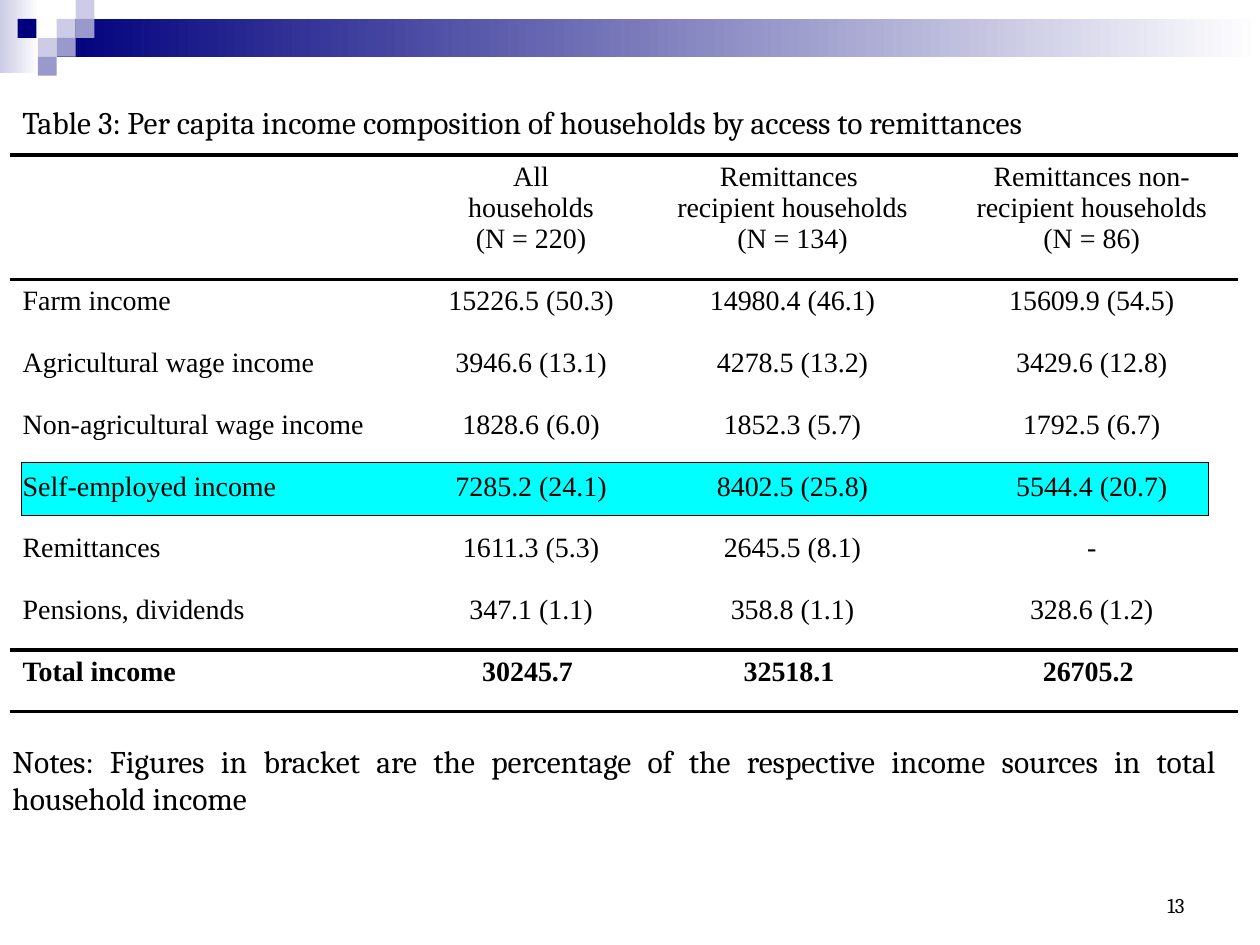
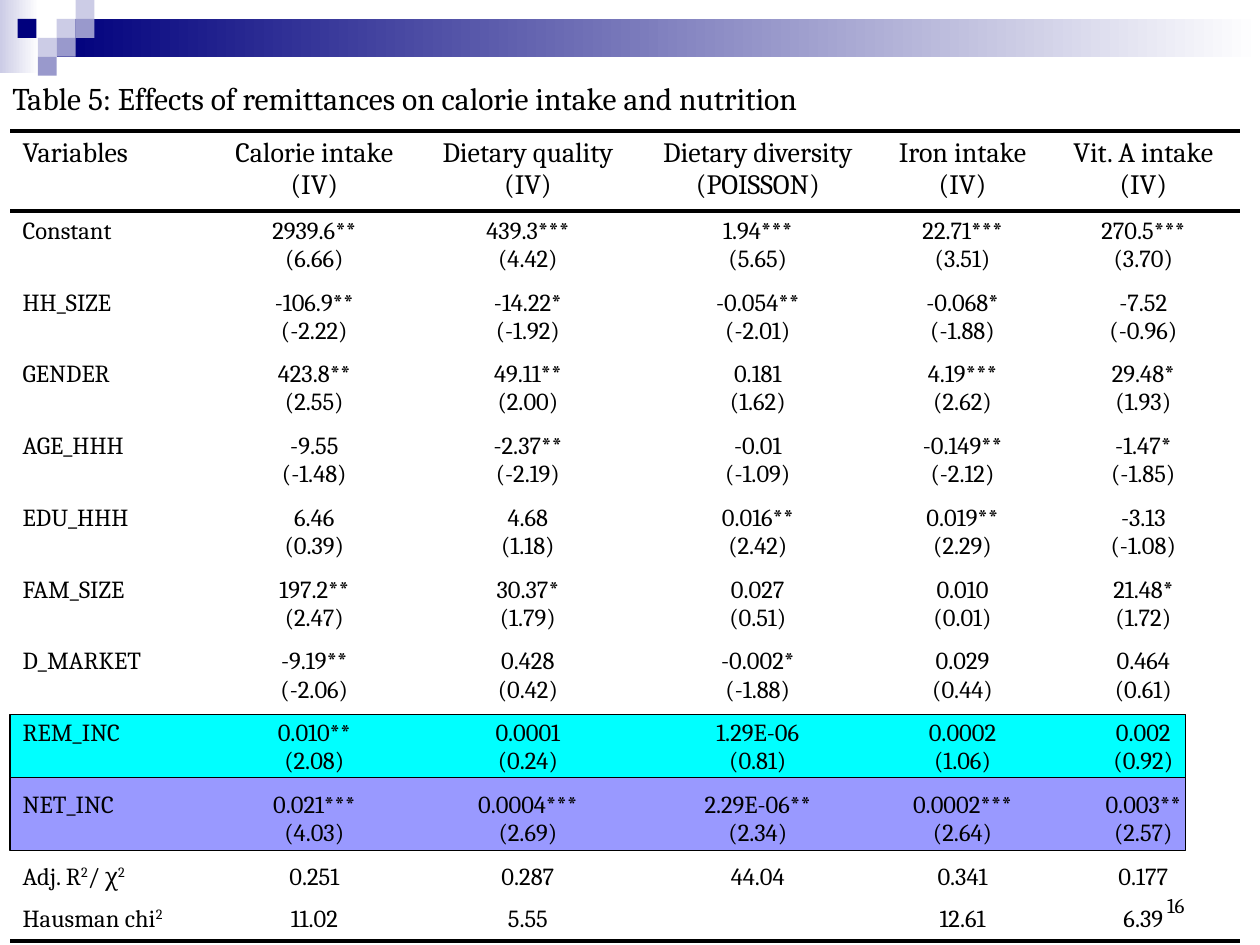
import pptx
import pptx.util
import pptx.dml.color
import pptx.enum.shapes
import pptx.enum.text
import pptx.oxml
import pptx.oxml.ns
from lxml import etree

RGB = pptx.dml.color.RGBColor
BLACK = RGB(0, 0, 0)
WHITE = RGB(255, 255, 255)
NAVY = RGB(0, 0, 0x7D)
PALE = RGB(0xCC, 0xCC, 0xE6)
MID = RGB(0x99, 0x99, 0xCC)
CYAN = RGB(0, 255, 255)
VIOLET = RGB(0x99, 0x99, 0xFF)

SERIF, TIMES = "Cambria", "Times New Roman"
NO_STYLE = "{2D5ABB26-0587-4C30-8999-92F81FD0307C}"
ALIGN = pptx.enum.text.PP_ALIGN
ANCHOR = pptx.enum.text.MSO_ANCHOR
IN, PT = pptx.util.Inches, pptx.util.Pt

# Top band: gradient bars, then squares as (column, row, colour) of a grid
UNIT = 0.15
BARS = [((0, 0, 0.31, 0.58), PALE), ((0.45, 0.15, 9.55, 0.3), NAVY)]
TILES = [(3, 1, PALE), (4, 0, PALE), (4, 1, MID), (2, 2, PALE),
         (0.93, 1, NAVY), (3, 2, MID), (2, 3, MID)]

# In cell text a line break starts a paragraph and ^...^ is superscript
INCOME = [
    ("", "All\nhouseholds\n(N = 220)",
     "Remittances \nrecipient households\n(N = 134)",
     "Remittances non- recipient households\n(N = 86)"),
    ("Farm income", "15226.5 (50.3)", "14980.4 (46.1)", "15609.9 (54.5)"),
    ("Agricultural wage income", "3946.6 (13.1)", "4278.5 (13.2)",
     "3429.6 (12.8)"),
    ("Non-agricultural wage income", "1828.6 (6.0)", "1852.3 (5.7)",
     "1792.5 (6.7)"),
    ("Self-employed income", "7285.2 (24.1)", "8402.5 (25.8)",
     "5544.4 (20.7)"),
    ("Remittances", "1611.3 (5.3)", "2645.5 (8.1)", "-"),
    ("Pensions, dividends", "347.1 (1.1)", "358.8 (1.1)", "328.6 (1.2)"),
    ("Total income", "30245.7 ", "32518.1 ", "26705.2 "),
]

EFFECTS = [
    ("Variables", "Calorie intake\n(IV)", "Dietary quality\n(IV)",
     "Dietary diversity\n(POISSON)", "Iron intake\n(IV)",
     "Vit. A intake\n(IV)"),
    ("Constant", "2939.6**\n(6.66)", "439.3***\n(4.42)", "1.94***\n(5.65)",
     "22.71***\n(3.51)", "270.5***\n(3.70)"),
    ("HH_SIZE", "-106.9**\n(-2.22)", "-14.22*\n(-1.92)", "-0.054**\n(-2.01)",
     "-0.068*\n(-1.88)", "-7.52\n(-0.96)"),
    ("GENDER", "423.8**\n(2.55)", "49.11**\n(2.00)", "0.181\n(1.62)",
     "4.19***\n(2.62)", "29.48*\n(1.93)"),
    ("AGE_HHH", "-9.55\n(-1.48)", "-2.37**\n(-2.19)", "-0.01\n(-1.09)",
     "-0.149**\n(-2.12)", "-1.47*\n(-1.85)"),
    ("EDU_HHH", "6.46\n(0.39)", "4.68\n(1.18)", "0.016**\n(2.42)",
     "0.019**\n(2.29)", "-3.13\n(-1.08)"),
    ("FAM_SIZE", "197.2**\n(2.47)", "30.37*\n(1.79)", "0.027\n(0.51)",
     "0.010\n(0.01)", "21.48*\n(1.72)"),
    ("D_MARKET", "-9.19**\n(-2.06)", "0.428\n(0.42)", "-0.002*\n(-1.88)",
     "0.029\n(0.44)", "0.464\n(0.61)"),
    ("REM_INC", "0.010**\n(2.08)", "0.0001\n(0.24)", "1.29E-06\n(0.81)",
     "0.0002\n(1.06)", "0.002\n(0.92)"),
    ("NET_INC", "0.021***\n(4.03)", "0.0004***\n(2.69)", "2.29E-06**\n(2.34)",
     "0.0002***\n(2.64)", "0.003**\n(2.57)"),
    ("Adj. R^2^/ χ^2^", "0.251", "0.287", "44.04", "0.341", "0.177"),
    ("Hausman chi^2^", "11.02", "5.55", "", "12.61", "6.39"),
]

# "rules" are the row edges that carry a line; "bold" is a row number
PAGES = [
    dict(num="13", at=(0.08, 0.77, 8.94, 0.4),
         title="Table 3: Per capita income composition of households "
               "by access to remittances",
         marks=[((0.17, 3.67, 9.42, 0.42), CYAN)],
         rows=INCOME, top=1.23, cols=(3.27, 1.73, 2.42, 2.33),
         tall=[0.99] + [0.49] * 7, rules={0, 1, 7, 8},
         font=TIMES, size=16, bold=7,
         note="Notes: Figures in bracket are the percentage of the "
              "respective income sources in total household income"),
    dict(num="16", at=(0, 0.58, 6.98, 0.4),
         title="Table 5: Effects of remittances on calorie intake "
               "and nutrition",
         marks=[((0.08, 6.17, 9.33, 0.58), VIOLET),
                ((0.08, 5.67, 9.33, 0.5), CYAN)],
         rows=EFFECTS, top=1.04, cols=(1.59, 1.65, 1.74, 1.91, 1.34, 1.53),
         tall=[0.63] + [0.57] * 9 + [0.33] * 2, rules={0, 1, 12},
         font=SERIF, size=14, bold=None, note=None),
]


def write(frame, text, size=18, font=SERIF, bold=False, align=ALIGN.LEFT):
    for i, line in enumerate(text.split("\n")):
        para = frame.add_paragraph() if i else frame.paragraphs[0]
        para.alignment = align
        if not line:
            para._p.get_or_add_endParaRPr().set("sz", str(size * 100))
            continue
        for k, part in enumerate(line.split("^")):
            if not part:
                continue
            run = para.add_run()
            run.text = part
            run.font.size = PT(size)
            run.font.name = font
            run.font.bold = bold
            run.font.color.rgb = BLACK
            if k % 2:
                run._r.get_or_add_rPr().set("baseline", "30000")


def label(slide, at, text, wrap=True, anchor=ANCHOR.TOP, **style):
    frame = slide.shapes.add_textbox(*map(IN, at)).text_frame
    frame.word_wrap = wrap
    frame.vertical_anchor = anchor
    write(frame, text, **style)


def block(slide, at, fill, fade=False, edge=False):
    kind = pptx.enum.shapes.MSO_SHAPE.RECTANGLE
    box = slide.shapes.add_shape(kind, *map(IN, at))
    box.shadow.inherit = False
    if fade:
        box.fill.gradient()
        box.fill.gradient_angle = 0
        for stop, tint in zip(box.fill.gradient_stops, (fill, WHITE)):
            stop.color.rgb = tint
    else:
        box.fill.solid()
        box.fill.fore_color.rgb = fill
    if edge:
        box.line.color.rgb = BLACK
        box.line.width = PT(0.75)
    else:
        box.line.fill.background()


def border(cell, ruled):
    """Draw the sides named in ruled and clear the others."""
    props = cell._tc.get_or_add_tcPr()
    qn = pptx.oxml.ns.qn
    for side in "LRTB":
        line = etree.SubElement(props, qn("a:ln" + side))
        if side in ruled:
            line.set("w", str(PT(2.25)))
            fill = etree.SubElement(line, qn("a:solidFill"))
            etree.SubElement(fill, qn("a:srgbClr")).set("val", str(BLACK))
        else:
            etree.SubElement(line, qn("a:noFill"))


def grid(slide, page):
    rows, cols, tall = page["rows"], page["cols"], page["tall"]
    at = (0.08, page["top"], sum(cols), sum(tall))
    table = slide.shapes.add_table(len(rows), len(cols),
                                   *map(IN, at)).table
    table.first_row = table.horz_banding = False
    style = table._tbl.tblPr.find(pptx.oxml.ns.qn("a:tableStyleId"))
    style.text = NO_STYLE
    for col, wide in zip(table.columns, cols):
        col.width = IN(wide)
    for r, row in enumerate(rows):
        table.rows[r].height = IN(tall[r])
        ruled = "T" * (r in page["rules"]) + "B" * (r + 1 in page["rules"])
        for c, text in enumerate(row):
            cell = table.cell(r, c)
            border(cell, ruled)
            cell.fill.background()
            write(cell.text_frame, text, size=page["size"] if r else 16,
                  font=page["font"], bold=r == page["bold"],
                  align=ALIGN.CENTER if c else ALIGN.LEFT)


def band(slide):
    for at, tint in BARS:
        block(slide, at, tint, fade=True)
    for col, row, tint in TILES:
        block(slide, (col * UNIT, row * UNIT, UNIT, UNIT), tint)


def main():
    deck = pptx.Presentation()
    deck.slide_width, deck.slide_height = IN(10), IN(7.5)
    for page in PAGES:
        slide = deck.slides.add_slide(deck.slide_layouts[6])
        band(slide)
        for at, tint in page["marks"]:
            block(slide, at, tint, edge=True)
        grid(slide, page)
        label(slide, page["at"], page["title"], wrap=False)
        if page["note"]:
            label(slide, (0, 5.83, 9.75, 0.71), page["note"],
                  anchor=ANCHOR.MIDDLE, align=ALIGN.JUSTIFY)
        label(slide, (7.17, 6.83, 2.33, 0.5), page["num"], size=12,
              anchor=ANCHOR.BOTTOM, align=ALIGN.RIGHT)
    deck.save("out.pptx")


if __name__ == "__main__":
    main()
